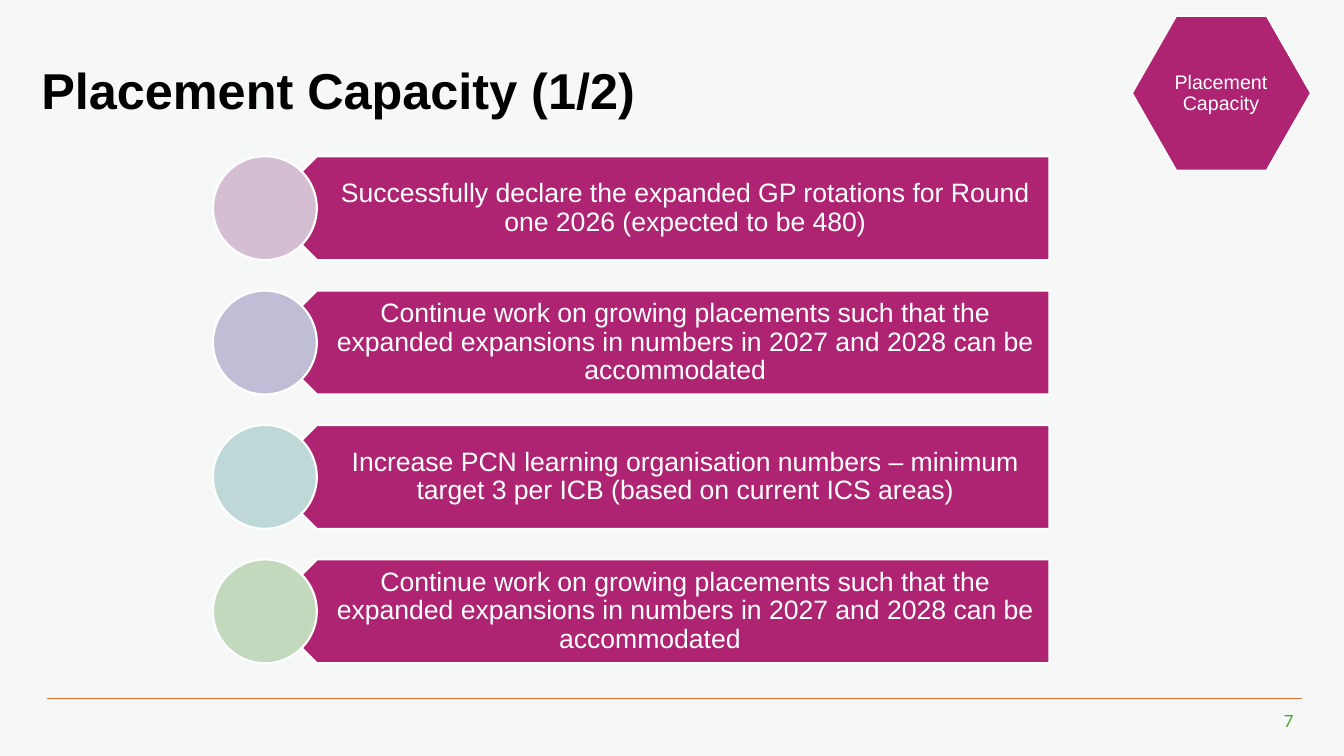
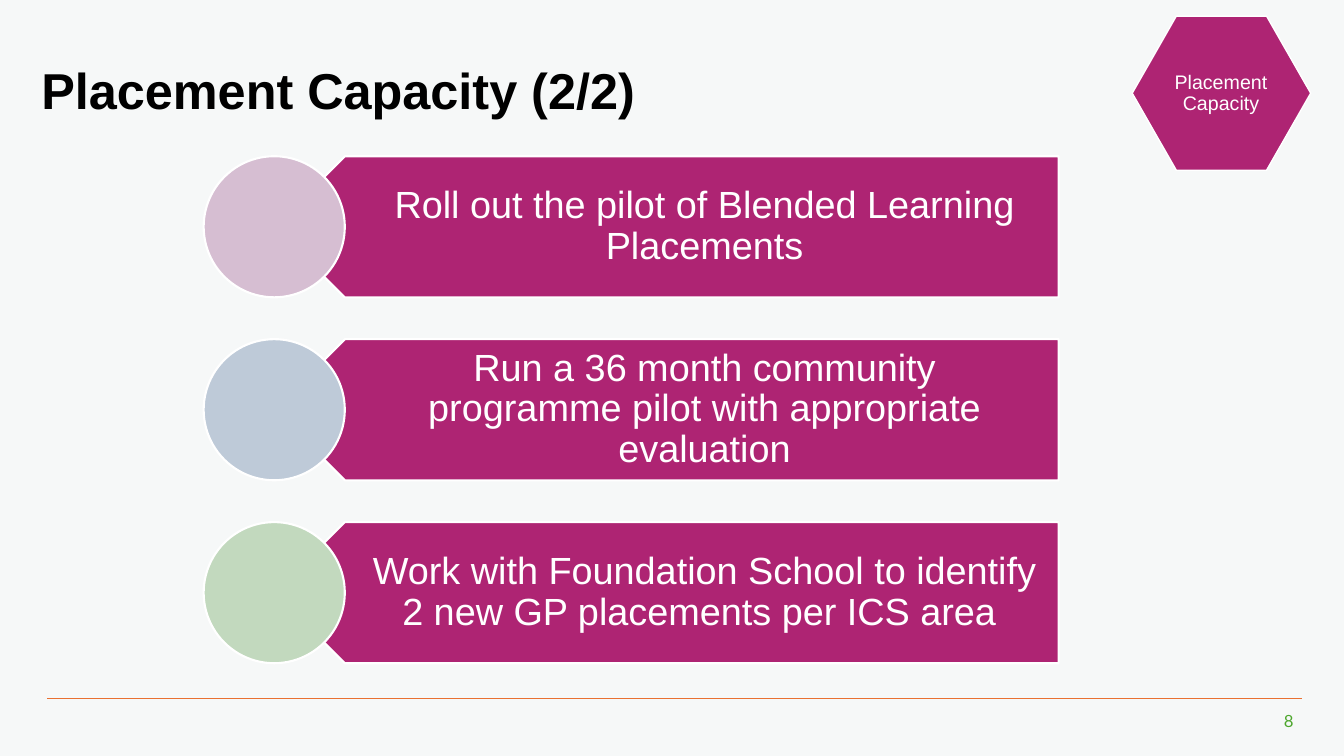
from lxml import etree
from pptx import Presentation
from pptx.dml.color import RGBColor
from pptx.enum.shapes import MSO_CONNECTOR, MSO_SHAPE as Preset
from pptx.enum.text import MSO_ANCHOR as Anchor, PP_ALIGN as Align
from pptx.oxml.ns import qn
from pptx.util import Inches, Pt

# Shared look
PAPER, INK, WHITE = "F6F8F8", "000000", "FFFFFF"
MAGENTA, RULE, GREEN = "AE2473", "E97132", "4EA72E"
MAUVE, LILAC, TEAL, STEEL, SAGE = "D6BED2", "C0BED7", "BED8D7", "BECAD8", "C2D9BE"

TITLE_STYLE = {"name": "Arial", "size": Pt(36), "bold": True}
NUMBER_STYLE = {"name": "Lato", "size": Pt(12)}
BADGE_STYLE = {"name": "Arial", "size": Pt(14)}

# List area
LIST_TOP, LIST_BOTTOM, LIST_CENTRE = 1.55, 6.58, 6.26
BAR_WIDTH = 7.78

# Title, page number, row height, text size, rows of (circle colour, text)
SLIDES = [
    ("Placement Capacity (1/2)", 7, 1.03, 19, [
        (MAUVE, "Successfully declare the expanded GP rotations for Round one 2026 "
                "(expected to be 480)"),
        (LILAC, "Continue work on growing placements such that the expanded expansions "
                "in numbers in 2027 and 2028 can be accommodated \t"),
        (TEAL, "Increase PCN learning organisation numbers – minimum target 3 per ICB "
               "(based on current ICS areas)"),
        (SAGE, "Continue work on growing placements such that the expanded expansions "
               "in numbers in 2027 and 2028 can be accommodated \t\t"),
    ]),
    ("Placement Capacity (2/2)", 8, 1.4, 27, [
        (MAUVE, "Roll out the pilot of Blended Learning Placements"),
        (STEEL, "Run a 36 month community programme pilot with appropriate evaluation"),
        (SAGE, "Work with Foundation School to identify 2 new GP placements per ICS area "),
    ]),
]


def colour(value):
    return RGBColor.from_string(value)


def apply(target, values):
    for attribute, value in values.items():
        setattr(target, attribute, value)


def add_text(slide, box, text, style, ink, align=Align.CENTER, insets=(0, 0, 0, 0),
             spacing=0.9, wrap=True, anchor=Anchor.MIDDLE):
    frame = slide.shapes.add_textbox(*map(Inches, box)).text_frame
    left, top, right, bottom = map(Inches, insets)
    apply(frame, {"word_wrap": wrap, "vertical_anchor": anchor,
                  "margin_left": left, "margin_top": top,
                  "margin_right": right, "margin_bottom": bottom})
    paragraph = frame.paragraphs[0]
    apply(paragraph, {"alignment": align, "line_spacing": spacing})
    run = paragraph.add_run()
    run.text = text
    apply(run.font, style)
    run.font.color.rgb = colour(ink)


def add_outlined(slide, preset, box, fill, weight=1.5):
    shape = slide.shapes.add_shape(preset, *map(Inches, box))
    shape.shadow.inherit = False
    shape.fill.solid()
    shape.fill.fore_color.rgb = colour(fill)
    shape.line.color.rgb = colour(WHITE)
    shape.line.width = Pt(weight)
    return shape


def add_footer(slide, number):
    add_text(slide, (12.52, 7, 0.41, 0.3), str(number), NUMBER_STYLE, GREEN, Align.RIGHT,
             (0.1, 0.05, 0.1, 0.05), spacing=1.0, wrap=False, anchor=Anchor.TOP)
    ends = map(Inches, (0.47, 6.93, 12.91, 6.93))
    rule = slide.shapes.add_connector(MSO_CONNECTOR.STRAIGHT, *ends)
    rule.line.color.rgb = colour(RULE)
    rule.line.width = Pt(0.5)
    etree.SubElement(rule._element.spPr, qn("a:effectLst"))


def add_badge(slide):
    hexagon = add_outlined(slide, Preset.HEXAGON, (11.23, 0.16, 1.77, 1.53), MAGENTA, 1)
    hexagon.adjustments[0] = 0.286
    add_text(slide, (11.52, 0.42, 1.18, 1.02), "Placement Capacity", BADGE_STYLE, WHITE,
             insets=(0.02,) * 4)


def add_list(slide, height, size, rows):
    """Spread the rows evenly; everything in a row scales with its height."""
    pitch = (LIST_BOTTOM - LIST_TOP - height) / (len(rows) - 1)
    circle_left = LIST_CENTRE - (BAR_WIDTH + height / 2) / 2
    bar_left = circle_left + height / 2
    notch = height / 4
    insets = [height * share for share in (0.44, 0.08, 0.15, 0.08)]
    style = {"name": "Arial", "size": Pt(size)}
    for index, (tint, text) in enumerate(rows):
        top = LIST_TOP + index * pitch
        bar = add_outlined(slide, Preset.PENTAGON, (bar_left, top, BAR_WIDTH, height), MAGENTA)
        bar.rotation = 180
        add_text(slide, (bar_left + notch, top, BAR_WIDTH - notch, height), text, style,
                 WHITE, insets=insets)
        add_outlined(slide, Preset.OVAL, (circle_left, top, height, height), tint)


def main():
    deck = Presentation()
    deck.slide_width, deck.slide_height = Inches(13.33), Inches(7.5)
    paper = deck.slide_master.background.fill
    paper.solid()
    paper.fore_color.rgb = colour(PAPER)

    for title, number, height, size, rows in SLIDES:
        slide = deck.slides.add_slide(deck.slide_layouts[6])
        add_footer(slide, number)
        add_text(slide, (0.41, 0.45, 12.47, 0.95), title, TITLE_STYLE, INK, Align.LEFT)
        add_list(slide, height, size, rows)
        add_badge(slide)

    deck.save("out.pptx")


if __name__ == "__main__":
    main()
